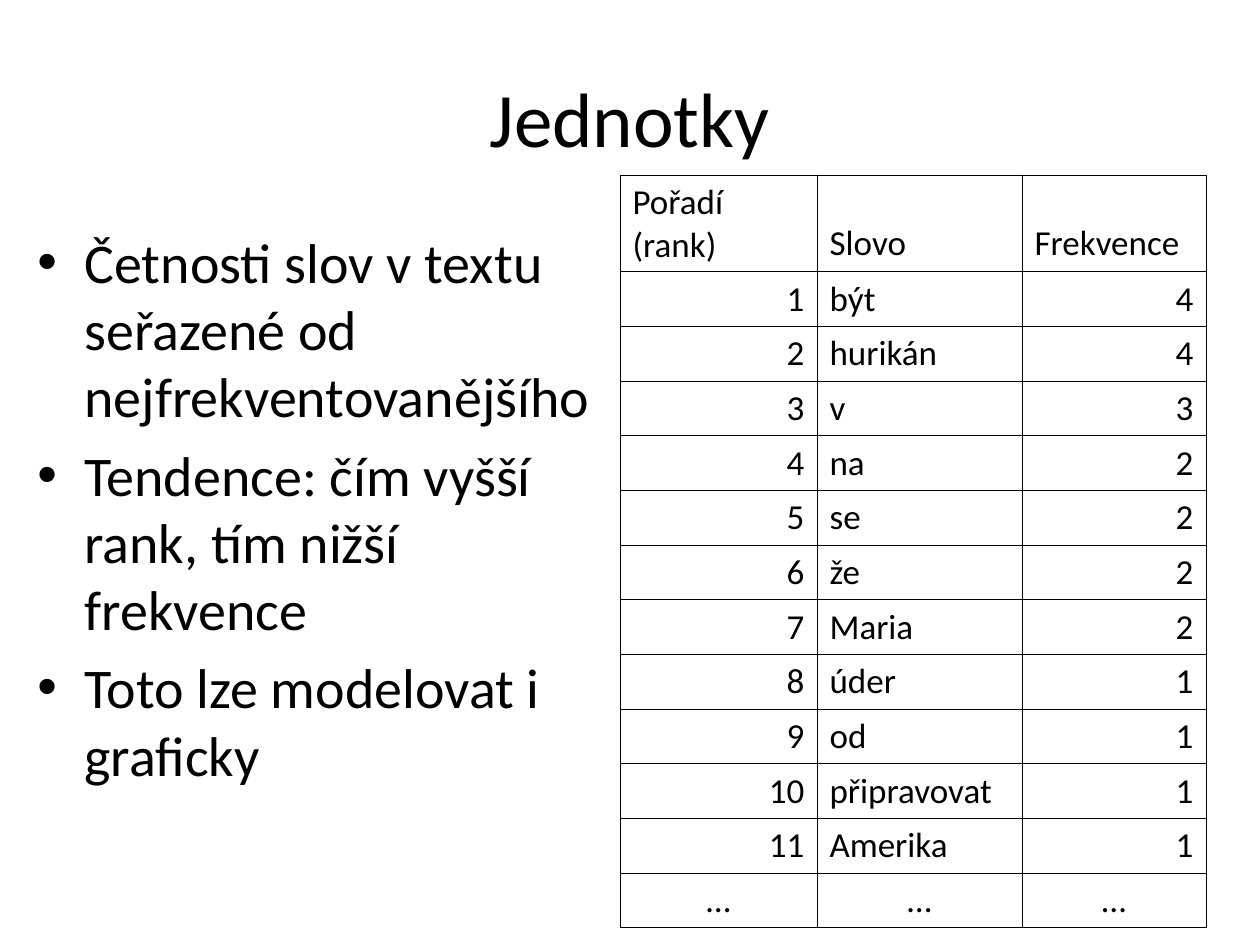
import pptx
import pptx.util
import pptx.dml.color
import pptx.enum.text
import pptx.oxml
import pptx.oxml.ns

SCALE = 914400 / 126
INK = "000000"
ALIGN = pptx.enum.text.PP_ALIGN
ANCHOR = pptx.enum.text.MSO_ANCHOR

POINTS = [
    "Četnosti slov v textu seřazené od nejfrekventovanějšího",
    "Tendence: čím vyšší rank, tím nižší frekvence",
    "Toto lze modelovat i graficky",
]
HEAD = ["Pořadí (rank)", "Slovo", "Frekvence"]
WORDS = [
    ("být", 4), ("hurikán", 4), ("v", 3), ("na", 2), ("se", 2), ("že", 2),
    ("Maria", 2), ("úder", 1), ("od", 1), ("připravovat", 1), ("Amerika", 1),
]


def px(n):
    return pptx.util.Emu(round(n * SCALE))


def color(code):
    return pptx.dml.color.RGBColor.from_string(code)


def style(para, size, align):
    para.alignment = align
    for run in para.runs:
        run.font.size = pptx.util.Pt(size)
        run.font.name = "Calibri"
        run.font.color.rgb = color(INK)


def frame(slide, box):
    text = slide.shapes.add_textbox(*map(px, box)).text_frame
    text.word_wrap = True
    return text


def title(slide, box):
    text = frame(slide, box)
    text.vertical_anchor = ANCHOR.MIDDLE
    text.text = "Jednotky"
    style(text.paragraphs[0], 44, ALIGN.CENTER)


def bullets(slide, box):
    text = frame(slide, box)
    text.text = "\n".join(POINTS)
    for para in text.paragraphs:
        style(para, 32, ALIGN.LEFT)
        para.space_before = pptx.util.Pt(6.4)
        props = para._p.get_or_add_pPr()
        props.set("marL", str(px(47)))
        props.set("indent", str(-px(47)))
        for tag, key, val in [("buFont", "typeface", "Arial"), ("buChar", "char", "•")]:
            props.append(pptx.oxml.parse_xml(
                f'<a:{tag} {pptx.oxml.ns.nsdecls("a")} {key}="{val}"/>'))


def border(cell):
    props = cell._tc.get_or_add_tcPr()
    for n, side in enumerate(["lnL", "lnR", "lnT", "lnB"]):
        props.insert(n, pptx.oxml.parse_xml(
            f'<a:{side} {pptx.oxml.ns.nsdecls("a")} w="{pptx.util.Pt(0.5)}">'
            f'<a:solidFill><a:srgbClr val="{INK}"/></a:solidFill></a:{side}>'))


def ranking(slide, box):
    rows = [HEAD]
    rows += [[str(n), word, str(freq)] for n, (word, freq) in enumerate(WORDS, 1)]
    rows += [["…"] * 3]
    shape = slide.shapes.add_table(len(rows), 3, *map(px, box))
    table = shape.table
    table.first_row = table.horz_banding = False
    for col, width in zip(table.columns, [197, 205, 184]):
        col.width = px(width)
    sides = [ALIGN.RIGHT, ALIGN.LEFT, ALIGN.RIGHT]
    for r, row in enumerate(rows):
        table.rows[r].height = px(45 if r else 77)
        for c, word in enumerate(row):
            cell = table.cell(r, c)
            cell.text = word
            cell.vertical_anchor = ANCHOR.BOTTOM
            cell.fill.background()
            border(cell)
            align = ALIGN.CENTER if word == "…" else sides[c] if r else ALIGN.LEFT
            style(cell.text_frame.paragraphs[0], 20, align)
    shape.height = px(box[3])


def main():
    deck = pptx.Presentation()
    deck.slide_width, deck.slide_height = px(1260), px(945)
    slide = deck.slides.add_slide(deck.slide_layouts[6])
    title(slide, (63, 38, 1134, 157))
    bullets(slide, (25, 221, 586, 698))
    ranking(slide, (620, 175, 586, 752))
    deck.save("out.pptx")


if __name__ == "__main__":
    main()
